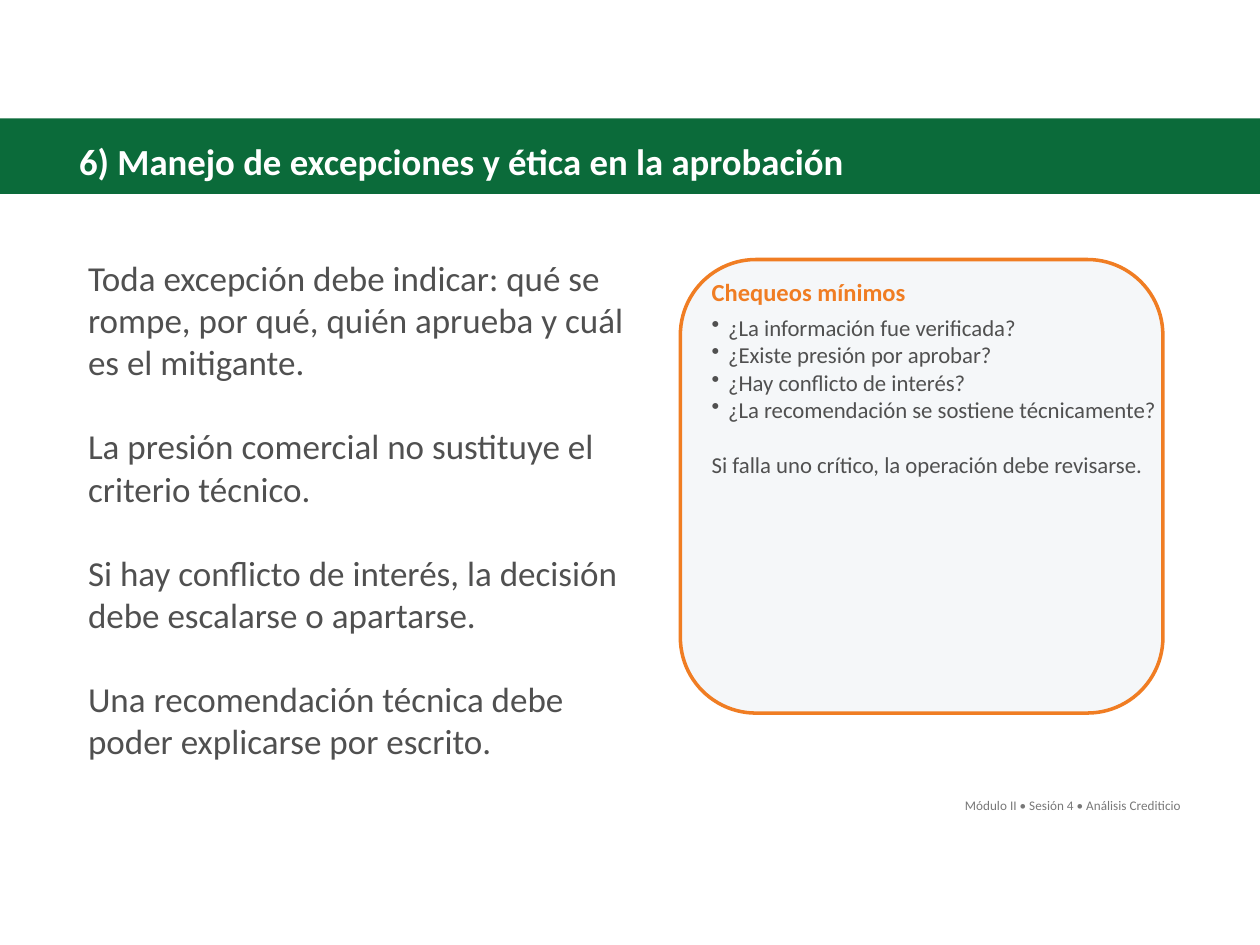
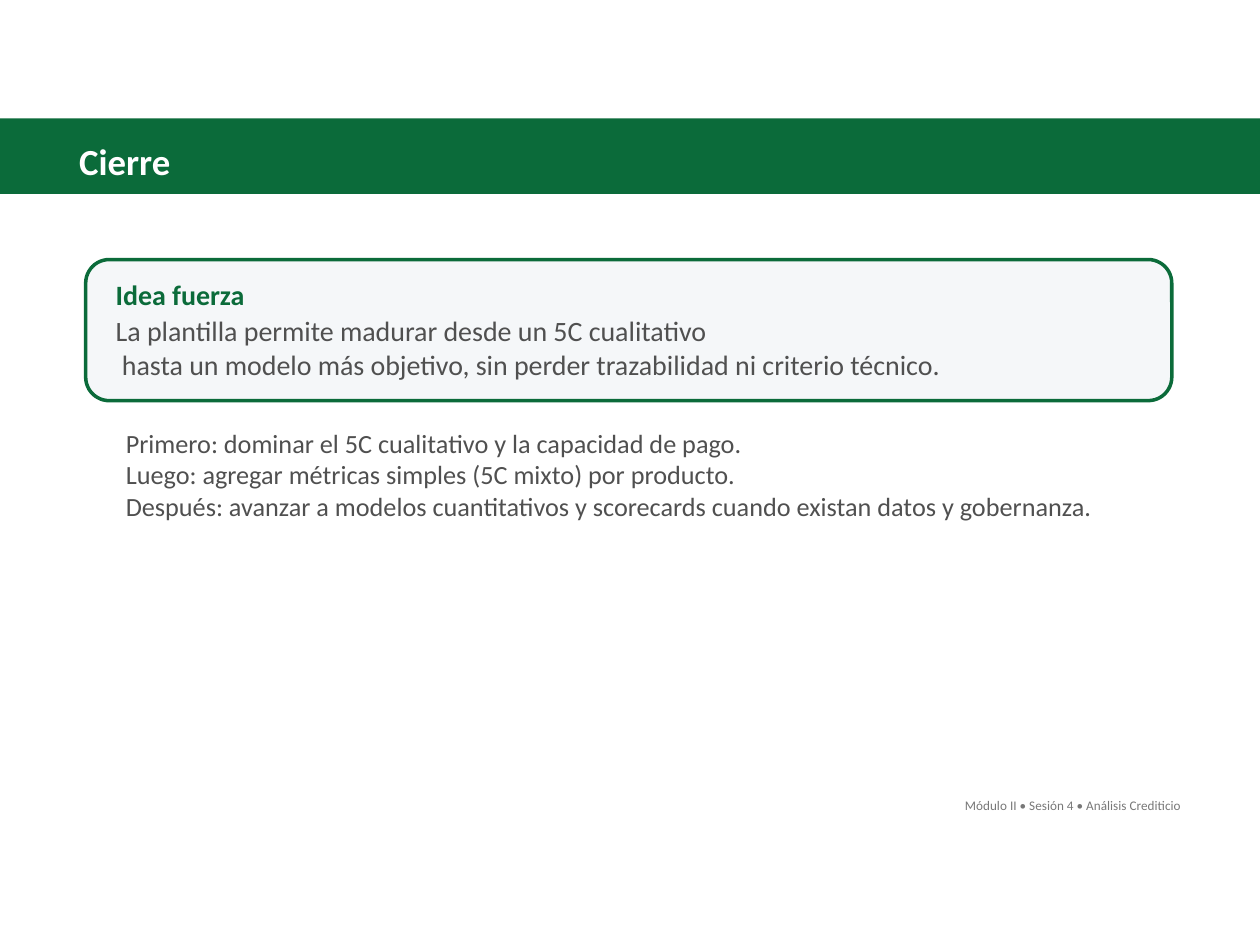
"""Build two training slides on approval ethics and the session closing."""
from dataclasses import dataclass

from lxml.etree import SubElement
from pptx import Presentation
from pptx.dml.color import RGBColor as Color
from pptx.enum.shapes import MSO_SHAPE as Shape
from pptx.enum.text import PP_ALIGN as Align
from pptx.oxml.ns import qn
from pptx.util import Inches, Pt


@dataclass(frozen=True)
class Theme:
    font: str = "Calibri"
    green: str = "0B6B3A"
    orange: str = "F07D23"
    panel: str = "F5F7F9"
    white: str = "FFFFFF"
    body: str = "505050"
    muted: str = "787878"
    title_size: float = 21
    footer_size: float = 7.5


THEME = Theme()
FOOTER = "Módulo II • Sesión 4 • Análisis Crediticio"
BAND = (0, 0.94, 10, 0.6)
FOOTER_BOX = (7.54, 6.28, 1.93, 0.23)

SLIDES = [
    {
        "title": "6) Manejo de excepciones y ética en la aprobación",
        "title_width": 6.33,
        "card": {
            "box": (5.4, 2.06, 3.83, 3.6),
            "accent": THEME.orange,
            "heading": "Chequeos mínimos",
            "heading_box": (5.55, 2.15, 1.75, 0.34),
            "heading_size": 14,
            "text_box": (5.55, 2.44, 3.78, 1.41),
            "text_size": 13,
            "paragraphs": [
                ("¿La información fue verificada?", {"bullet": True}),
                ("¿Existe presión por aprobar?", {"bullet": True}),
                ("¿Hay conflicto de interés?", {"bullet": True}),
                ("¿La recomendación se sostiene técnicamente?", {"bullet": True}),
                ("Si falla uno crítico, la operación debe revisarse.", {"before": 15.6}),
            ],
        },
        "body": {
            "box": (0.6, 1.99, 4.58, 4.14),
            "size": 20,
            "gap": 24,
            "paragraphs": [
                "Toda excepción debe indicar: qué se rompe, por qué, quién aprueba y cuál es el mitigante.",
                "La presión comercial no sustituye el criterio técnico.",
                "Si hay conflicto de interés, la decisión debe escalarse o apartarse.",
                "Una recomendación técnica debe poder explicarse por escrito.",
            ],
        },
    },
    {
        "title": "Cierre",
        "title_width": 0.93,
        "card": {
            "box": (0.68, 2.06, 8.62, 1.12),
            "accent": THEME.green,
            "heading": "Idea fuerza",
            "heading_box": (0.82, 2.15, 1.24, 0.37),
            "heading_size": 16,
            "text_box": (0.82, 2.44, 6.83, 0.64),
            "text_size": 16,
            "paragraphs": [
                ("La plantilla permite madurar desde un 5C cualitativo", {}),
                ("hasta un modelo más objetivo, sin perder trazabilidad ni criterio técnico.", {"indent": 0.05}),
            ],
        },
        "body": {
            "box": (0.9, 3.34, 8.1, 0.86),
            "size": 15,
            "gap": 0,
            "paragraphs": [
                "Primero: dominar el 5C cualitativo y la capacidad de pago.",
                "Luego: agregar métricas simples (5C mixto) por producto.",
                "Después: avanzar a modelos cuantitativos y scorecards cuando existan datos y gobernanza.",
            ],
        },
    },
]


def add_panel(slide, kind, box, fill, line=None):
    shape = slide.shapes.add_shape(kind, *map(Inches, box))
    shape.shadow.inherit = False
    shape.fill.solid()
    shape.fill.fore_color.rgb = Color.from_string(fill)
    if line:
        shape.line.color.rgb = Color.from_string(line)
        shape.line.width = Pt(2)
    else:
        shape.line.fill.background()


def set_indent(paragraph, indent=0, bullet=False):
    properties = paragraph._p.get_or_add_pPr()
    if bullet:
        indent = 0.13
        properties.set("indent", str(-Inches(indent)))
        SubElement(properties, qn("a:buChar")).set("char", "•")
    properties.set("marL", str(Inches(indent)))


def add_text(slide, box, paragraphs, size, color, bold=False, wrap=False, align=Align.LEFT):
    frame = slide.shapes.add_textbox(*map(Inches, box)).text_frame
    frame.word_wrap = wrap
    font_format = {"name": THEME.font, "size": Pt(size), "bold": bold}
    for index, (text, layout) in enumerate(paragraphs):
        paragraph = frame.add_paragraph() if index else frame.paragraphs[0]
        paragraph.text = text
        paragraph.alignment = align
        if index and layout.get("before"):
            paragraph.space_before = Pt(layout["before"])
        set_indent(paragraph, layout.get("indent", 0), layout.get("bullet", False))
        for name, value in font_format.items():
            setattr(paragraph.font, name, value)
        paragraph.font.color.rgb = Color.from_string(color)


def add_card(slide, card):
    add_panel(slide, Shape.ROUNDED_RECTANGLE, card["box"], THEME.panel, card["accent"])
    add_text(slide, card["heading_box"], [(card["heading"], {})],
             card["heading_size"], card["accent"], bold=True)
    add_text(slide, card["text_box"], card["paragraphs"], card["text_size"], THEME.body)


def add_body(slide, body):
    paragraphs = [(text, {"before": body["gap"]}) for text in body["paragraphs"]]
    add_text(slide, body["box"], paragraphs, body["size"], THEME.body, wrap=True)


def build_slide(presentation, content):
    slide = presentation.slides.add_slide(presentation.slide_layouts[6])
    add_panel(slide, Shape.RECTANGLE, BAND, THEME.green)
    add_text(slide, (0.53, 1.05, content["title_width"], 0.45), [(content["title"], {})],
             THEME.title_size, THEME.white, bold=True)
    add_card(slide, content["card"])
    add_body(slide, content["body"])
    add_text(slide, FOOTER_BOX, [(FOOTER, {})], THEME.footer_size, THEME.muted, align=Align.RIGHT)


def main():
    presentation = Presentation()
    presentation.slide_width, presentation.slide_height = Inches(10), Inches(7.5)
    for content in SLIDES:
        build_slide(presentation, content)
    presentation.save("out.pptx")


if __name__ == "__main__":
    main()
